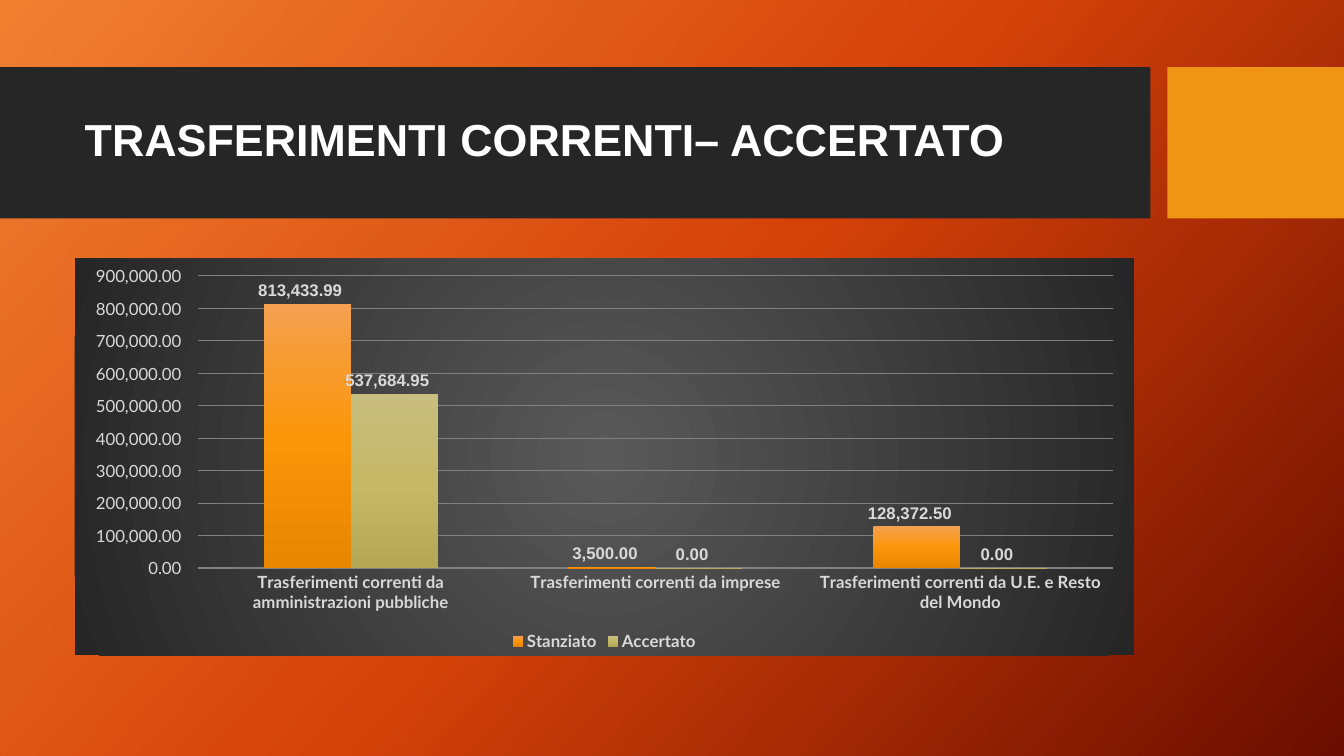
from lxml import etree
from pptx import Presentation
from pptx.chart.data import CategoryChartData
from pptx.dml.color import RGBColor
from pptx.enum.chart import XL_CHART_TYPE as ChartType
from pptx.enum.chart import XL_LABEL_POSITION as LabelPosition
from pptx.enum.chart import XL_LEGEND_POSITION as LegendPosition
from pptx.enum.chart import XL_TICK_MARK as TickMark
from pptx.enum.shapes import MSO_SHAPE as Shape
from pptx.enum.text import MSO_ANCHOR as Anchor
from pptx.enum.text import MSO_AUTO_SIZE as AutoSize
from pptx.enum.text import PP_ALIGN as Align
from pptx.oxml import parse_xml
from pptx.oxml.ns import nsdecls, qn
from pptx.util import Pt

NUMBER_FORMAT = "#,##0.00\\ _€"
CATEGORIES = [
    "Trasferimenti correnti da amministrazioni pubbliche",
    "Trasferimenti correnti da imprese",
    "Trasferimenti correnti da U.E. e Resto del Mondo",
]
SERIES = [
    ("Stanziato", (813433.99, 3500, 128372.5), ("F4A050", "FB960A", "E88600")),
    ("Accertato", (537684.95, 0, 0), ("C8BE7F", "C5B867", "B4A756")),
]
LINEAR = '<a:lin ang="{}" scaled="0"/>'
RADIAL = ('<a:path path="circle"><a:fillToRect l="50000" t="50000" '
          'r="50000" b="50000"/></a:path>')


def color(value):
    return RGBColor.from_string(value)


def gradient(colors, direction):
    step = 100000 // (len(colors) - 1)
    stops = "".join(
        f'<a:gs pos="{index * step}"><a:srgbClr val="{value}"/></a:gs>'
        for index, value in enumerate(colors))
    return parse_xml(f'<a:gradFill {nsdecls("a")} rotWithShape="1">'
                     f"<a:gsLst>{stops}</a:gsLst>{direction}</a:gradFill>")


def replace_solid(properties, fill):
    properties.replace(properties.find(qn("a:solidFill")), fill)


def set_font(font, name, size, value, bold=False):
    font.name = name
    font.size = Pt(size)
    font.bold = bold
    font.color.rgb = color(value)


def paint_background(slide):
    slide.background.fill.solid()
    properties = slide.element.cSld.find(qn("p:bg")).find(qn("p:bgPr"))
    replace_solid(properties, gradient(("F18031", "D54209", "6A0D00"),
                                       LINEAR.format(42 * 60000)))


def add_band(slide, left, width, value):
    band = slide.shapes.add_shape(Shape.RECTANGLE, Pt(left), Pt(48),
                                  Pt(width), Pt(108))
    band.shadow.inherit = False
    band.fill.solid()
    band.fill.fore_color.rgb = color(value)
    band.line.fill.background()
    return band


def set_title(slide, text):
    title = slide.shapes.title
    title.left, title.top = Pt(53.3), Pt(59)
    title.width, title.height = Pt(756.7), Pt(85)
    frame = title.text_frame
    frame.text = text
    frame.word_wrap = True
    frame.auto_size = AutoSize.NONE
    frame.vertical_anchor = Anchor.MIDDLE
    para = frame.paragraphs[0]
    para.alignment = Align.LEFT
    para.line_spacing = 0.9
    set_font(para.runs[0].font, "Arial", 32, "FFFFFF", True)
    slide.shapes._spTree.append(title.element)


def style_axis(axis, bold):
    axis.major_tick_mark = TickMark.NONE
    axis.minor_tick_mark = TickMark.NONE
    axis.format.line.fill.background()
    set_font(axis.tick_labels.font, "Lato", 12, "D9D9D9", bold)


def style_series(series, colors):
    series.format.fill.solid()
    replace_solid(series.format.fill._xPr,
                  gradient(colors, LINEAR.format(90 * 60000)))
    series.invert_if_negative = False
    labels = series.data_labels
    labels.show_value = True
    labels.position = LabelPosition.OUTSIDE_END
    labels.number_format = NUMBER_FORMAT
    labels.number_format_is_linked = False
    set_font(labels.font, "Arial", 12, "D9D9D9", True)


def fill_chart_area(chart):
    properties = parse_xml(f'<c:spPr {nsdecls("c", "a")}/>')
    properties.append(gradient(("595959", "262626"), RADIAL))
    line = etree.SubElement(properties, qn("a:ln"))
    etree.SubElement(line, qn("a:noFill"))
    chart.element.find(qn("c:txPr")).addprevious(properties)


def add_transfer_chart(slide):
    data = CategoryChartData(number_format=NUMBER_FORMAT)
    data.categories = CATEGORIES
    for name, values, _ in SERIES:
        data.add_series(name, values)
    chart = slide.shapes.add_chart(ChartType.COLUMN_CLUSTERED, Pt(53.3),
                                   Pt(184.3), Pt(756.7), Pt(283.7), data).chart
    set_font(chart.font, "Lato", 10, "FFFFFF")
    fill_chart_area(chart)
    chart.has_title = False
    chart.has_legend = True
    chart.legend.position = LegendPosition.BOTTOM
    chart.legend.include_in_layout = False
    set_font(chart.legend.font, "Lato", 12, "D9D9D9", True)

    style_axis(chart.category_axis, True)
    value_axis = chart.value_axis
    style_axis(value_axis, False)
    value_axis.tick_labels.number_format = NUMBER_FORMAT
    value_axis.tick_labels.number_format_is_linked = False
    grid = value_axis.major_gridlines.format.line
    grid.width = Pt(0.75)
    grid.color.rgb = color("808080")

    plot = chart.plots[0]
    plot.gap_width = 150
    plot.overlap = 0
    plot.vary_by_categories = False
    for series, (_, _, colors) in zip(plot.series, SERIES):
        style_series(series, colors)


def main():
    deck = Presentation()
    deck.slide_width, deck.slide_height = Pt(960), Pt(540)
    slide = deck.slides.add_slide(deck.slide_layouts[5])
    paint_background(slide)
    add_band(slide, 0, 821.8, "262626")
    add_band(slide, 833.8, 126.2, "F09415")
    set_title(slide, "TRASFERIMENTI CORRENTI– ACCERTATO")
    add_transfer_chart(slide)
    deck.save("out.pptx")


if __name__ == "__main__":
    main()
